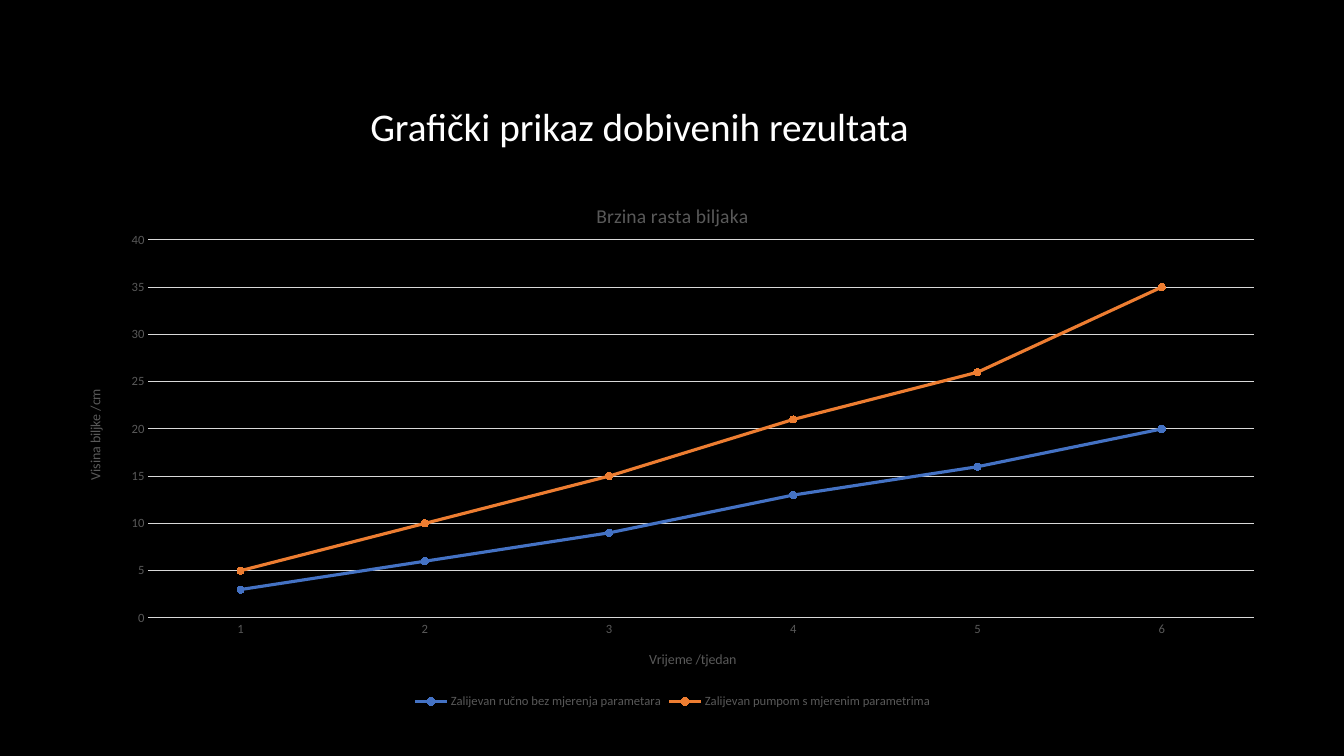
from lxml.etree import SubElement
from pptx import Presentation
from pptx.chart.data import CategoryChartData
from pptx.dml.color import RGBColor
from pptx.enum.chart import XL_CHART_TYPE as ChartType, XL_LEGEND_POSITION as LegendPosition
from pptx.enum.chart import XL_MARKER_STYLE as MarkerStyle, XL_TICK_MARK as TickMark
from pptx.enum.text import MSO_ANCHOR as Anchor, MSO_AUTO_SIZE as AutoSize, PP_ALIGN as Align
from pptx.oxml.ns import qn
from pptx.util import Emu, Pt

BLACK = RGBColor(0x00, 0x00, 0x00)
WHITE = RGBColor(0xFF, 0xFF, 0xFF)
GRAY = RGBColor(0x59, 0x59, 0x59)
GRID = RGBColor(0xD9, 0xD9, 0xD9)
BLUE = RGBColor(0x44, 0x72, 0xC4)
ORANGE = RGBColor(0xED, 0x7D, 0x31)

EMU_PER_PX = 9525
TITLE_ONLY = 5

WEEKS = ["1", "2", "3", "4", "5", "6"]
GROWTH = [
    ("Zalijevan ručno bez mjerenja parametara", [3, 6, 9, 13, 16, 20], BLUE),
    ("Zalijevan pumpom s mjerenim parametrima", [2, 4, 6, 8, 10, 15], ORANGE),
]


def px(*lengths):
    return [Emu(length * EMU_PER_PX) for length in lengths]


class SlideBuilder:
    font_name = "Calibri"

    def __init__(self, deck):
        self.slide = deck.slides.add_slide(deck.slide_layouts[TITLE_ONLY])
        background = self.slide.background.fill
        background.solid()
        background.fore_color.rgb = BLACK

    def style(self, font, size, color):
        font.name = self.font_name
        font.size = Pt(size)
        font.bold = False
        font.color.rgb = color

    def line(self, line, color, width):
        line.color.rgb = color
        line.width = Pt(width)

    def add_text(self, frame, text, size, color):
        paragraph = frame.paragraphs[0]
        paragraph.alignment = Align.CENTER
        run = paragraph.add_run()
        run.text = text
        self.style(run.font, size, color)

    def title(self, text, *box):
        heading = self.slide.shapes.title
        heading.left, heading.top, heading.width, heading.height = px(*box)
        frame = heading.text_frame
        frame.word_wrap = True
        frame.auto_size = AutoSize.SHAPE_TO_FIT_TEXT
        frame.vertical_anchor = Anchor.TOP
        self.add_text(frame, text, 28, WHITE)

    def axis(self, axis, title):
        axis.major_tick_mark = axis.minor_tick_mark = TickMark.NONE
        self.style(axis.tick_labels.font, 9, GRAY)
        self.add_text(axis.axis_title.text_frame, title, 10, GRAY)

    def place_plot(self, chart, **fractions):
        plot_area = chart.element.find(".//" + qn("c:plotArea"))
        for old in plot_area.findall(qn("c:layout")):
            plot_area.remove(old)
        layout = SubElement(plot_area, qn("c:layout"))
        plot_area.insert(0, layout)
        manual = SubElement(layout, qn("c:manualLayout"))
        settings = {"layoutTarget": "inner", "xMode": "edge", "yMode": "edge", **fractions}
        for tag, value in settings.items():
            SubElement(manual, qn("c:" + tag)).set("val", str(value))

    def line_chart(self, title, week_title, height_title, *box):
        data = CategoryChartData()
        data.categories = WEEKS
        for name, heights, _ in GROWTH:
            data.add_series(name, heights)
        chart = self.slide.shapes.add_chart(
            ChartType.LINE_MARKERS_STACKED, *px(*box), data).chart
        self.style(chart.font, 10, BLACK)
        self.add_text(chart.chart_title.text_frame, title, 14, GRAY)
        chart.chart_title.include_in_layout = False

        weeks, heights = chart.category_axis, chart.value_axis
        self.axis(weeks, week_title)
        self.axis(heights, height_title)
        self.line(weeks.format.line, GRID, 0.75)
        heights.format.line.fill.background()
        heights.minimum_scale, heights.maximum_scale, heights.major_unit = 0, 40, 5
        self.line(heights.major_gridlines.format.line, GRID, 0.75)
        rotated = chart.element.xpath(".//c:valAx/c:title//a:bodyPr")[0]
        rotated.set("rot", "-5400000")
        rotated.set("vert", "horz")

        chart.has_legend = True
        chart.legend.position = LegendPosition.BOTTOM
        chart.legend.include_in_layout = False
        self.style(chart.legend.font, 9, GRAY)

        plot = chart.plots[0]
        plot.vary_by_categories = False
        for series, (_, _, color) in zip(plot.series, GROWTH):
            series.smooth = False
            self.line(series.format.line, color, 2.25)
            marker = series.marker
            marker.style = MarkerStyle.CIRCLE
            marker.size = 5
            marker.format.fill.solid()
            marker.format.fill.fore_color.rgb = color
            self.line(marker.format.line, color, 0.75)
        self.place_plot(chart, x=0.061, y=0.108, w=0.926, h=0.713)


def main():
    deck = Presentation()
    deck.slide_width, deck.slide_height = px(1280, 720)
    builder = SlideBuilder(deck)
    builder.line_chart("Brzina rasta biljaka", "Vrijeme /tjedan", "Visina biljke /cm",
                       72, 174, 1137, 505)
    builder.title("Grafički prikaz dobivenih rezultata", 232, 93, 754, 55)
    deck.save("out.pptx")


if __name__ == "__main__":
    main()
